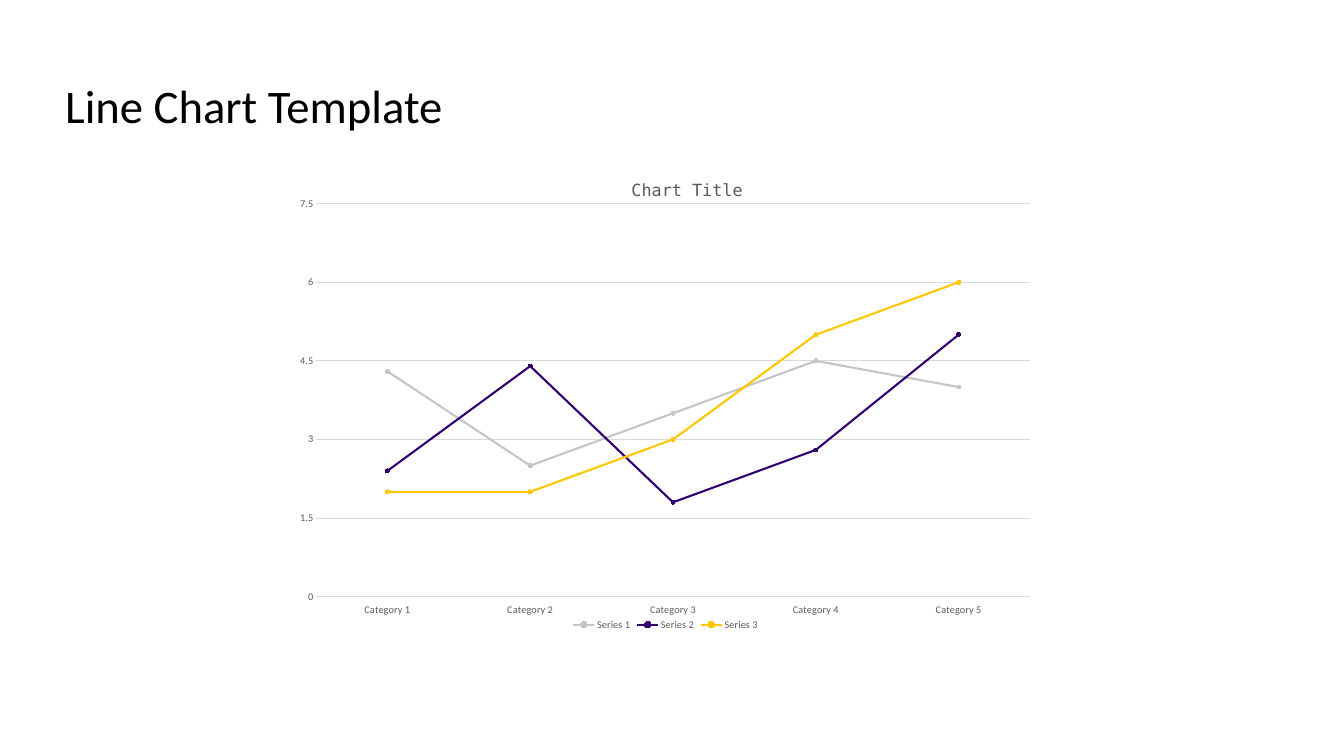
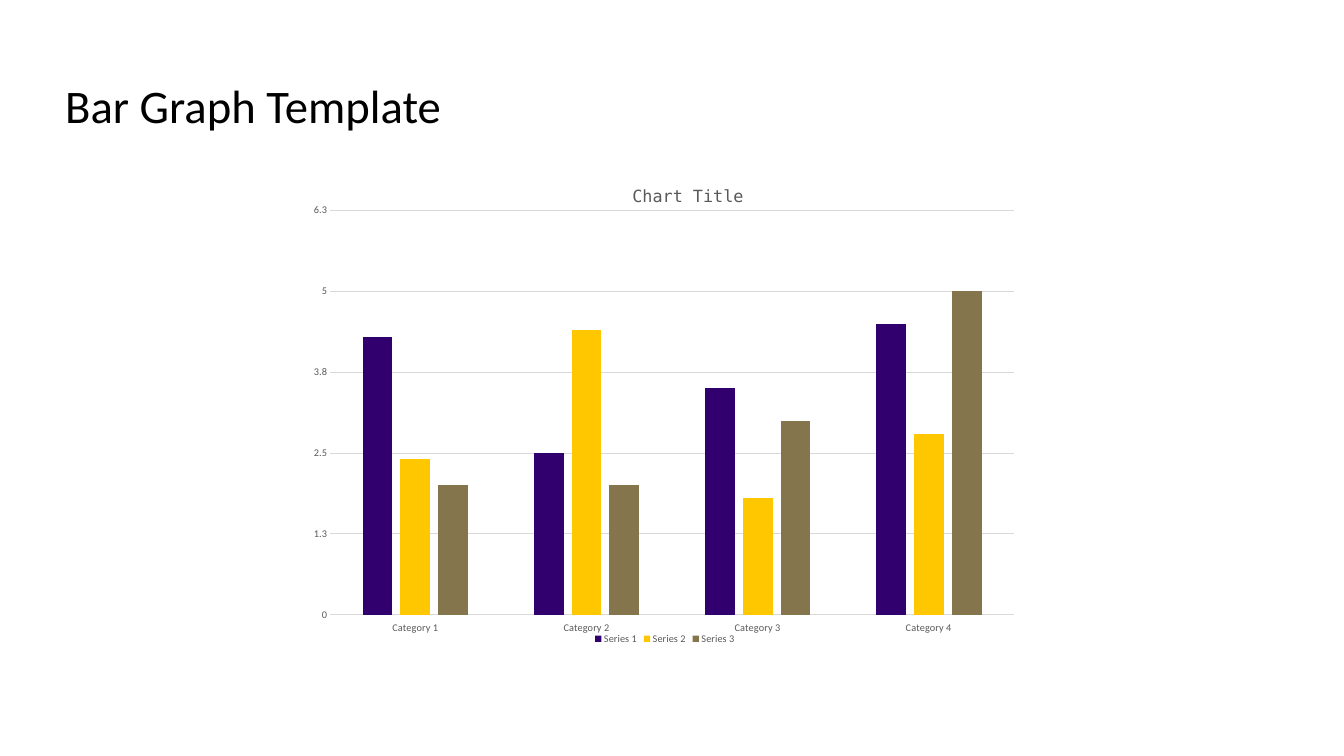
from lxml import etree
from pptx import Presentation
from pptx.chart.data import CategoryChartData
from pptx.dml.color import RGBColor
from pptx.enum import chart as charts, text
from pptx.oxml.ns import qn
from pptx.util import Inches, Pt

BLACK = RGBColor(0x00, 0x00, 0x00)
TEXT_GRAY = RGBColor(0x59, 0x59, 0x59)
GRID_GRAY = RGBColor(0xD9, 0xD9, 0xD9)
SILVER = RGBColor(0xC3, 0xC5, 0xC8)
PURPLE = RGBColor(0x32, 0x00, 0x6E)
GOLD = RGBColor(0xFF, 0xC7, 0x00)
BRONZE = RGBColor(0x85, 0x75, 0x4D)

BODY_FONT = "Calibri"
CHART_FONT = "Cabin"
CHART_TITLE_FONT = "DejaVu Sans Mono"
TITLE_ONLY_LAYOUT = 5


def set_font(font, name, size, color):
    font.name, font.size, font.bold = name, Pt(size), False
    font.color.rgb = color


def set_layout(parent, index, **settings):
    """Give a chart part a manual layout, as fractions of the chart area."""
    for old_layout in parent.findall(qn("c:layout")):
        parent.remove(old_layout)
    layout = etree.Element(qn("c:layout"))
    manual = etree.SubElement(layout, qn("c:manualLayout"))
    for name, value in settings.items():
        etree.SubElement(manual, qn(f"c:{name}")).set("val", str(value))
    parent.insert(index, layout)


class ChartDeck:
    """Holds the shared style and the current slide."""

    def __init__(self):
        self.presentation = Presentation()
        self.presentation.slide_width = Inches(20)
        self.presentation.slide_height = Inches(11.25)
        self.slide = None

    def add_slide(self, title):
        layout = self.presentation.slide_layouts[TITLE_ONLY_LAYOUT]
        self.slide = self.presentation.slides.add_slide(layout)
        shape = self.slide.shapes.title
        shape.left, shape.top = Inches(0.92), Inches(1.19)
        shape.width, shape.height = Inches(17.25), Inches(0.86)
        frame = shape.text_frame
        frame.text = title
        frame.word_wrap = True
        frame.auto_size = text.MSO_AUTO_SIZE.NONE
        frame.vertical_anchor = text.MSO_ANCHOR.MIDDLE
        frame.margin_left = frame.margin_right = Inches(0.05)
        frame.margin_top = frame.margin_bottom = Inches(0.05)
        paragraph = frame.paragraphs[0]
        paragraph.alignment = text.PP_ALIGN.LEFT
        paragraph.line_spacing = 0.9
        set_font(paragraph.font, BODY_FONT, 50, BLACK)

    def add_chart(self, kind, box, series, major_unit, plot_box):
        """Add a chart; series holds (values, colour) pairs."""
        data = CategoryChartData()
        data.categories = [f"Category {n + 1}" for n in range(len(series[0][0]))]
        for number, (values, _) in enumerate(series, 1):
            data.add_series(f"Series {number}", values)
        frame = self.slide.shapes.add_chart(kind, *map(Inches, box), data)
        chart = frame.chart
        set_font(chart.font, CHART_FONT, 10, BLACK)
        self.format_axes(chart, major_unit)
        self.format_title(chart)

        chart.has_legend = True
        chart.legend.position = charts.XL_LEGEND_POSITION.BOTTOM
        chart.legend.include_in_layout = True
        set_font(chart.legend.font, BODY_FONT, 11, TEXT_GRAY)

        plot = chart.plots[0]
        plot.vary_by_categories = False
        x, y, width, height = plot_box
        set_layout(plot._element.getparent(), 0, layoutTarget="inner",
                   xMode="edge", yMode="edge", x=x, y=y, w=width, h=height)
        return plot

    def format_axes(self, chart, major_unit):
        category_axis, value_axis = chart.category_axis, chart.value_axis
        for axis in (category_axis, value_axis):
            axis.major_tick_mark = axis.minor_tick_mark = charts.XL_TICK_MARK.NONE
            set_font(axis.tick_labels.font, BODY_FONT, 11, TEXT_GRAY)
        category_axis.tick_label_position = charts.XL_TICK_LABEL_POSITION.LOW
        value_axis.minimum_scale = 0
        value_axis.maximum_scale = 5 * major_unit
        value_axis.major_unit = major_unit
        value_axis.tick_labels.number_format = "0.#"
        value_axis.tick_labels.number_format_is_linked = False
        value_axis.format.line.fill.background()
        value_axis.has_major_gridlines = True
        for line in (category_axis.format.line, value_axis.major_gridlines.format.line):
            line.color.rgb = GRID_GRAY
            line.width = Pt(1)

    def format_title(self, chart):
        chart.has_title = True
        title = chart.chart_title
        title.text_frame.text = "Chart Title"
        set_font(title.text_frame.paragraphs[0].font, CHART_TITLE_FONT, 18, TEXT_GRAY)
        set_layout(title._element, 1, xMode="edge", yMode="edge", x=0.45, y=0.01)
        title._element.find(qn("c:overlay")).set("val", "1")

    def add_line_chart(self, box, series, major_unit, plot_box):
        kind = charts.XL_CHART_TYPE.LINE_MARKERS
        plot = self.add_chart(kind, box, series, major_unit, plot_box)
        for line, (_, color) in zip(plot.series, series):
            line.smooth = False
            line.format.line.color.rgb = color
            line.format.line.width = Pt(2.25)
            line.marker.style = charts.XL_MARKER_STYLE.CIRCLE
            line.marker.size = 4
            line.marker.format.fill.solid()
            line.marker.format.fill.fore_color.rgb = color
            line.marker.format.line.color.rgb = color

    def add_column_chart(self, box, series, major_unit, plot_box):
        kind = charts.XL_CHART_TYPE.COLUMN_CLUSTERED
        plot = self.add_chart(kind, box, series, major_unit, plot_box)
        plot.gap_width = 219
        plot.overlap = -27
        for column, (_, color) in zip(plot.series, series):
            column.format.fill.solid()
            column.format.fill.fore_color.rgb = color


def main():
    deck = ChartDeck()

    deck.add_slide("Line Chart Template")
    deck.add_line_chart(
        box=(4.37, 2.55, 11.07, 6.88),
        series=[((4.3, 2.5, 3.5, 4.5, 4), SILVER),
                ((2.4, 4.4, 1.8, 2.8, 5), PURPLE),
                ((2, 2, 3, 5, 6), GOLD)],
        major_unit=1.5,
        plot_box=(0.03, 0.07, 0.96, 0.85))

    deck.add_slide("Bar Graph Template")
    deck.add_column_chart(
        box=(4.59, 2.64, 10.61, 7),
        series=[((4.3, 2.5, 3.5, 4.5), PURPLE),
                ((2.4, 4.4, 1.8, 2.8), GOLD),
                ((2, 2, 3, 5), BRONZE)],
        major_unit=1.25,
        plot_box=(0.03, 0.07, 0.96, 0.86))

    deck.presentation.save("out.pptx")


if __name__ == "__main__":
    main()
